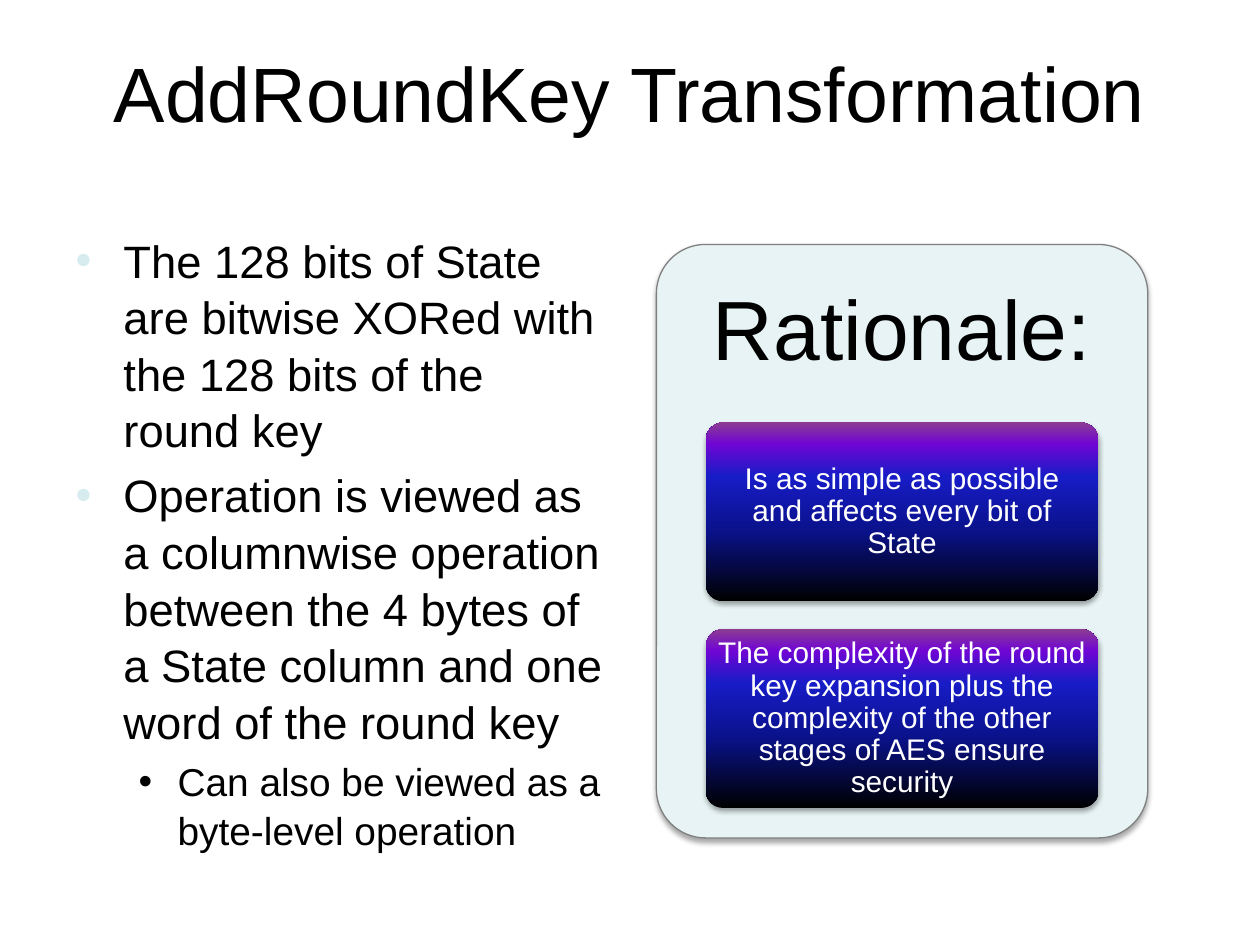
import pptx
import pptx.util
import pptx.dml.color
import pptx.enum.shapes
import pptx.enum.text
import pptx.oxml
import pptx.oxml.ns
from lxml import etree

COLS, ROWS = 100, 75
ALIGN = pptx.enum.text.PP_ALIGN
ANCHOR = pptx.enum.text.MSO_ANCHOR
GLOW = [(0, "000000"), (40, "0A128C"), (70, "181CC7"),
        (88, "7005D4"), (100, "8C3D91")]
POINTS = [
    ("The 128 bits of State are bitwise XORed with the 128 bits of the round key", 0),
    ("Operation is viewed as a columnwise operation between the 4 bytes of "
     "a State column and one word of the round key", 0),
    ("Can also be viewed as a byte-level operation", 1),
]
REASONS = [
    "Is as simple as possible and affects every bit of State",
    "The complexity of the round key expansion plus the complexity of the "
    "other stages of AES ensure security",
]


def tint(code):
    return pptx.dml.color.RGBColor.from_string(code)


def add(parent, tag, **attrs):
    """Append a drawing element with the given attributes."""
    node = etree.SubElement(parent, pptx.oxml.ns.qn("a:" + tag))
    for key, value in attrs.items():
        node.set(key, str(value))
    return node


def write(par, text, size, color="000000", align=None, line=None, before=None):
    run = par.add_run()
    run.text = text
    run.font.name = "Arial"
    run.font.size = pptx.util.Pt(size)
    run.font.color.rgb = tint(color)
    if align is not None:
        par.alignment = align
    if line is not None:
        par.line_spacing = line
    if before is not None:
        par.space_before = pptx.util.Pt(before)


class Deck:
    """Holds the style and the current slide; lengths are grid columns and rows."""

    # level: (size, indent, hang, space before, bullet colour)
    levels = {0: (25.9, 0.38, 0.38, 5, "D6ECEE"),
              1: (22.2, 0.81, 0.31, 4.4, "000000")}

    def __init__(self):
        self.file = pptx.Presentation()
        self.file.slide_width = pptx.util.Inches(10)
        self.file.slide_height = pptx.util.Inches(7.5)
        self.slide = self.file.slides.add_slide(self.file.slide_layouts[1])

    def box(self, left, top, width, height):
        across = self.file.slide_width / COLS
        down = self.file.slide_height / ROWS
        return (round(left * across), round(top * down),
                round(width * across), round(height * down))

    def place(self, shape, area):
        shape.left, shape.top, shape.width, shape.height = self.box(*area)

    def frame(self, shape, anchor, inset=(0.1, 0.05)):
        frame = shape.text_frame
        frame.word_wrap = True
        frame.auto_size = pptx.enum.text.MSO_AUTO_SIZE.NONE
        frame.vertical_anchor = anchor
        frame.margin_left = frame.margin_right = pptx.util.Inches(inset[0])
        frame.margin_top = frame.margin_bottom = pptx.util.Inches(inset[1])
        return frame

    def title(self, text, area):
        shape = self.slide.shapes.title
        self.place(shape, area)
        frame = self.frame(shape, ANCHOR.MIDDLE)
        write(frame.paragraphs[0], text, 44, align=ALIGN.CENTER)

    def list(self, items, area):
        shape = self.slide.placeholders[1]
        self.place(shape, area)
        frame = self.frame(shape, ANCHOR.TOP)
        for order, (text, level) in enumerate(items):
            par = frame.add_paragraph() if order else frame.paragraphs[0]
            size, indent, hang, gap, color = self.levels[level]
            par.level = level
            self.bullet(par, indent, hang, color)
            write(par, text, size, line=1.04, before=gap if order else 0)

    def bullet(self, par, indent, hang, color):
        props = par._p.get_or_add_pPr()
        props.set("marL", str(pptx.util.Inches(indent)))
        props.set("indent", str(-pptx.util.Inches(hang)))
        add(add(props, "buClr"), "srgbClr", val=color)
        add(props, "buFont", typeface="Arial")
        add(props, "buChar", char="•")

    def round(self, area):
        """Add a rounded rectangle with a soft shadow below it."""
        kind = pptx.enum.shapes.MSO_SHAPE.ROUNDED_RECTANGLE
        shape = self.slide.shapes.add_shape(kind, *self.box(*area))
        shape.adjustments[0] = 0.1
        shape.shadow.inherit = False
        effect = shape.element.find(".//" + pptx.oxml.ns.qn("a:effectLst"))
        shade = add(effect, "outerShdw", blurRad=pptx.util.Pt(3.1),
                    dist=pptx.util.Pt(1.8), dir=90 * 60000, rotWithShape=0)
        add(add(shade, "srgbClr", val="000000"), "alpha", val=35000)
        return shape

    def panel(self, area):
        shape = self.round(area)
        shape.fill.solid()
        shape.fill.fore_color.rgb = tint("E7F3F4")
        shape.line.color.rgb = tint("808080")
        shape.line.width = pptx.util.Pt(0.75)

    def head(self, text, area):
        shape = self.slide.shapes.add_textbox(*self.box(*area))
        frame = self.frame(shape, ANCHOR.MIDDLE, (0.2, 0.2))
        write(frame.paragraphs[0], text, 48, align=ALIGN.CENTER, line=0.9)

    def card(self, text, area):
        shape = self.round(area)
        shape.line.fill.background()
        shape.fill.gradient()
        shape.fill.gradient_angle = 90
        stops = shape.element.find(".//" + pptx.oxml.ns.qn("a:gsLst"))
        for stop in list(stops):
            stops.remove(stop)
        for share, color in GLOW:
            add(add(stops, "gs", pos=share * 1000), "srgbClr", val=color)
        frame = self.frame(shape, ANCHOR.MIDDLE, (0.05, 0.04))
        write(frame.paragraphs[0], text, 17, "FFFFFF", ALIGN.CENTER, 0.9)


def main():
    deck = Deck()
    deck.title("AddRoundKey Transformation", (5, 3, 90, 8.5))
    deck.list(POINTS, (5, 17.8, 44.2, 49.2))

    left, top, width, height = 52.1, 19.4, 39, 47.1
    deck.panel((left, top, width, height))
    deck.head("Rationale:", (left, top, width, 0.3 * height))
    tall, gap = 14.2, 2.2
    for order, text in enumerate(REASONS):
        row = top + 0.3 * height + order * (tall + gap)
        deck.card(text, (left + 0.1 * width, row, 0.8 * width, tall))
    deck.file.save("out.pptx")


if __name__ == "__main__":
    main()
